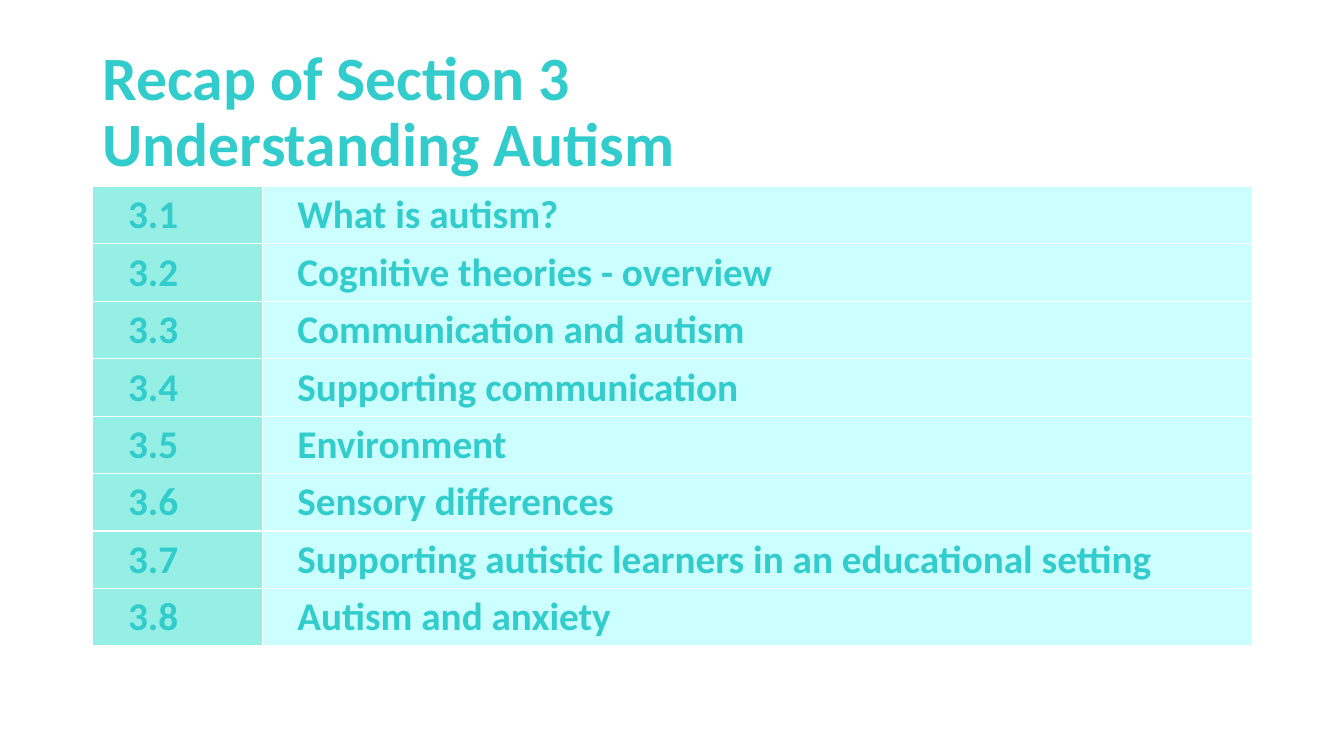
from dataclasses import dataclass

from lxml import etree
from pptx import Presentation
from pptx.dml.color import RGBColor
from pptx.enum.text import MSO_ANCHOR
from pptx.oxml.ns import qn
from pptx.util import Inches, Pt

MIDDLE = MSO_ANCHOR.MIDDLE
TURQUOISE = RGBColor(0x33, 0xCC, 0xCC)
NUMBER_FILL = RGBColor(0x95, 0xEF, 0xE4)
TOPIC_FILL = RGBColor(0xCC, 0xFF, 0xFF)
WHITE = RGBColor(0xFF, 0xFF, 0xFF)
FONT_NAME = "Calibri"

LEFT, WIDTH = Inches(0.92), Inches(11.5)
TITLE_TOP, TITLE_HEIGHT = Inches(0.4), Inches(1.45)
AGENDA_TOP, ROW_HEIGHT = Inches(1.85), Inches(0.57)
INDENT = Inches(0.25)
BORDER_WIDTH = Pt(1)
BORDER_TAGS = ("a:lnL", "a:lnR", "a:lnT", "a:lnB")

SECTION = 3
TITLE = f"Recap of Section {SECTION}\vUnderstanding Autism"
TOPICS = (
    "What is autism?",
    "Cognitive theories - overview",
    "Communication and autism",
    "Supporting communication",
    "Environment",
    "Sensory differences",
    "Supporting autistic learners in an educational setting",
    "Autism and anxiety",
)


@dataclass(frozen=True)
class AgendaColumn:
    width: int
    fill: RGBColor
    entries: tuple[str, ...]


COLUMNS = (
    AgendaColumn(
        Inches(1.68),
        NUMBER_FILL,
        tuple(f"{SECTION}.{number}" for number in range(1, len(TOPICS) + 1)),
    ),
    AgendaColumn(Inches(9.82), TOPIC_FILL, TOPICS),
)


def style_paragraph(paragraph, size: int) -> None:
    font = paragraph.font
    font.name = FONT_NAME
    font.size = Pt(size)
    font.bold = True
    font.color.rgb = TURQUOISE


def add_borders(cell) -> None:
    """Draw white lines on all four sides; they must precede the cell fill."""
    properties = cell._tc.get_or_add_tcPr()
    for position, tag in enumerate(BORDER_TAGS):
        line = etree.Element(qn(tag), w=str(BORDER_WIDTH))
        solid_fill = etree.SubElement(line, qn("a:solidFill"))
        etree.SubElement(solid_fill, qn("a:srgbClr"), val=str(WHITE))
        properties.insert(position, line)


def fill_cell(cell, text: str, color: RGBColor) -> None:
    cell.text = text
    paragraph = cell.text_frame.paragraphs[0]
    style_paragraph(paragraph, 28)
    paragraph_properties = paragraph._p.get_or_add_pPr()
    paragraph_properties.set("marL", str(INDENT))
    paragraph_properties.set("indent", "0")
    cell.fill.solid()
    cell.fill.fore_color.rgb = color
    add_borders(cell)


def add_title(slide) -> None:
    title = slide.shapes.add_textbox(LEFT, TITLE_TOP, WIDTH, TITLE_HEIGHT)
    frame = title.text_frame
    frame.word_wrap = True
    frame.vertical_anchor = MIDDLE
    paragraph = frame.paragraphs[0]
    paragraph.text = TITLE
    paragraph.line_spacing = 0.9
    style_paragraph(paragraph, 44)


def add_agenda(slide) -> None:
    agenda = slide.shapes.add_table(
        len(TOPICS), len(COLUMNS), LEFT, AGENDA_TOP, WIDTH, ROW_HEIGHT * len(TOPICS)
    ).table
    agenda.first_row = False
    agenda.horz_banding = False
    for column_index, column in enumerate(COLUMNS):
        agenda.columns[column_index].width = column.width
        for row_index, entry in enumerate(column.entries):
            fill_cell(agenda.cell(row_index, column_index), entry, column.fill)


def main() -> None:
    presentation = Presentation()
    presentation.slide_width = Inches(13.33)
    presentation.slide_height = Inches(7.5)
    slide = presentation.slides.add_slide(presentation.slide_layouts[6])
    add_title(slide)
    add_agenda(slide)
    presentation.save("out.pptx")


if __name__ == "__main__":
    main()
